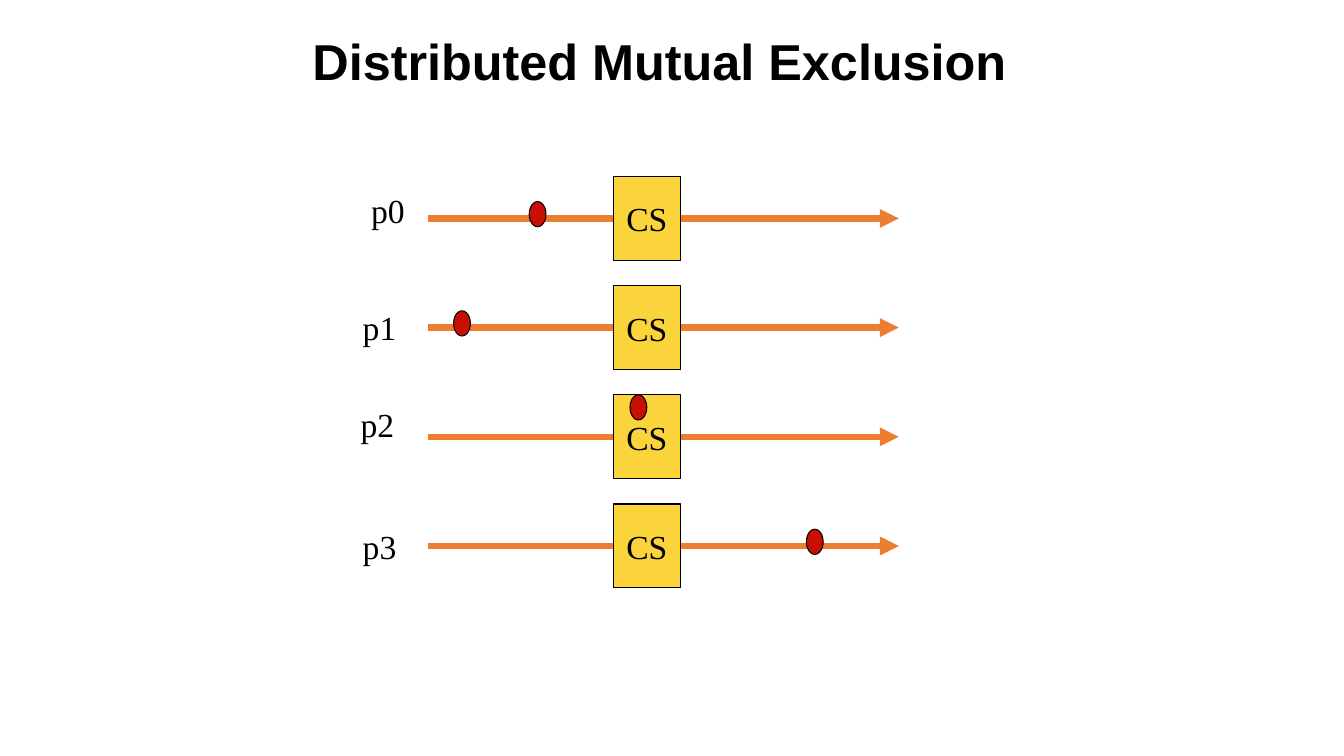
"""Build the Distributed Mutual Exclusion slide."""
from dataclasses import dataclass
from typing import NamedTuple

from lxml.etree import SubElement
from pptx import Presentation
from pptx.dml.color import RGBColor
from pptx.enum.shapes import MSO_CONNECTOR, MSO_SHAPE
from pptx.enum.text import MSO_ANCHOR, MSO_AUTO_SIZE, PP_ALIGN
from pptx.oxml.ns import qn
from pptx.shapes.autoshape import Shape
from pptx.slide import Slide
from pptx.util import Emu, Pt


@dataclass(frozen=True)
class Theme:
    ink: RGBColor = RGBColor.from_string("000000")
    arrow: RGBColor = RGBColor.from_string("ED7D31")
    section: RGBColor = RGBColor.from_string("FAD43A")
    token: RGBColor = RGBColor.from_string("C70F05")
    title_font: str = "Arial"
    body_font: str = "Times New Roman"
    title_size: Pt = Pt(36)
    body_size: Pt = Pt(24)
    arrow_width: Pt = Pt(4.5)
    outline_width: Pt = Pt(0.75)


class Box(NamedTuple):
    left: int
    top: int
    width: int
    height: int


class Process(NamedTuple):
    name: str
    label_left: int
    label_top: int
    token_left: int
    token_top: int


THEME = Theme()
EMU_PER_PX = 9525
SLIDE_WIDTH, SLIDE_HEIGHT = 1280, 720
TITLE_BOX = Box(288, 24, 687, 68)
ARROW_LEFT, ARROW_RIGHT = 408, 856
FIRST_ROW, ROW_PITCH = 208, 104
SECTION_LEFT, SECTION_WIDTH, SECTION_HEIGHT = 584, 64, 80
TOKEN_WIDTH, TOKEN_HEIGHT = 16, 24
LABEL_WIDTH, LABEL_HEIGHT = 51, 48
PROCESSES = [
    Process("p0", 344, 176, 504, 192),
    Process("p1", 336, 288, 432, 296),
    Process("p2", 334, 380, 600, 376),
    Process("p3", 336, 496, 768, 504),
]


def px(n: int) -> Emu:
    """Turn whole pixels into EMU."""
    return Emu(n * EMU_PER_PX)


def set_text(sp: Shape, text: str, font: str, size: Pt, bold: bool = False,
             align: PP_ALIGN = PP_ALIGN.LEFT,
             anchor: MSO_ANCHOR = MSO_ANCHOR.TOP) -> None:
    """Fill a shape with one unwrapped line of formatted text."""
    tf = sp.text_frame
    tf.text = text
    tf.word_wrap = False
    tf.vertical_anchor = anchor
    p = tf.paragraphs[0]
    p.alignment = align
    r = p.runs[0]
    r.font.name = font
    r.font.size = size
    r.font.bold = bold
    r.font.color.rgb = THEME.ink


def add_title(s: Slide, text: str) -> None:
    """Move and format the title placeholder."""
    sp = s.shapes.title
    sp.left, sp.top, sp.width, sp.height = map(px, TITLE_BOX)
    set_text(sp, text, THEME.title_font, THEME.title_size, bold=True)
    sp.text_frame.auto_size = MSO_AUTO_SIZE.SHAPE_TO_FIT_TEXT


def add_arrow(s: Slide, y: int) -> None:
    """Draw one process timeline."""
    c = s.shapes.add_connector(MSO_CONNECTOR.STRAIGHT, px(ARROW_LEFT), px(y),
                               px(ARROW_RIGHT), px(y))
    c.line.color.rgb = THEME.arrow
    c.line.width = THEME.arrow_width
    SubElement(c.line._get_or_add_ln(), qn("a:tailEnd"), type="triangle")
    SubElement(c._element.spPr, qn("a:effectLst"))


def add_outlined(s: Slide, kind: MSO_SHAPE, box: Box, fill: RGBColor) -> Shape:
    """Draw a filled shape with a thin outline."""
    sp = s.shapes.add_shape(kind, *map(px, box))
    sp.shadow.inherit = False
    sp.fill.solid()
    sp.fill.fore_color.rgb = fill
    sp.line.color.rgb = THEME.ink
    sp.line.width = THEME.outline_width
    return sp


def add_section(s: Slide, y: int) -> None:
    """Draw the critical section centred on a timeline."""
    box = Box(SECTION_LEFT, y - SECTION_HEIGHT // 2, SECTION_WIDTH, SECTION_HEIGHT)
    sp = add_outlined(s, MSO_SHAPE.RECTANGLE, box, THEME.section)
    set_text(sp, "CS", THEME.body_font, THEME.body_size,
             align=PP_ALIGN.CENTER, anchor=MSO_ANCHOR.MIDDLE)


def add_process(s: Slide, process: Process, y: int) -> None:
    """Draw a process with its timeline, critical section, token and label."""
    add_arrow(s, y)
    add_section(s, y)
    token = Box(process.token_left, process.token_top, TOKEN_WIDTH, TOKEN_HEIGHT)
    add_outlined(s, MSO_SHAPE.OVAL, token, THEME.token)
    label = Box(process.label_left, process.label_top, LABEL_WIDTH, LABEL_HEIGHT)
    sp = s.shapes.add_textbox(*map(px, label))
    set_text(sp, process.name, THEME.body_font, THEME.body_size)
    sp.text_frame.auto_size = MSO_AUTO_SIZE.SHAPE_TO_FIT_TEXT


def main() -> None:
    """Build and save the presentation."""
    prs = Presentation()
    prs.slide_width, prs.slide_height = px(SLIDE_WIDTH), px(SLIDE_HEIGHT)
    s = prs.slides.add_slide(prs.slide_layouts[5])
    add_title(s, "Distributed Mutual Exclusion")
    for i, process in enumerate(PROCESSES):
        add_process(s, process, FIRST_ROW + i * ROW_PITCH)
    prs.save("out.pptx")


if __name__ == "__main__":
    main()
